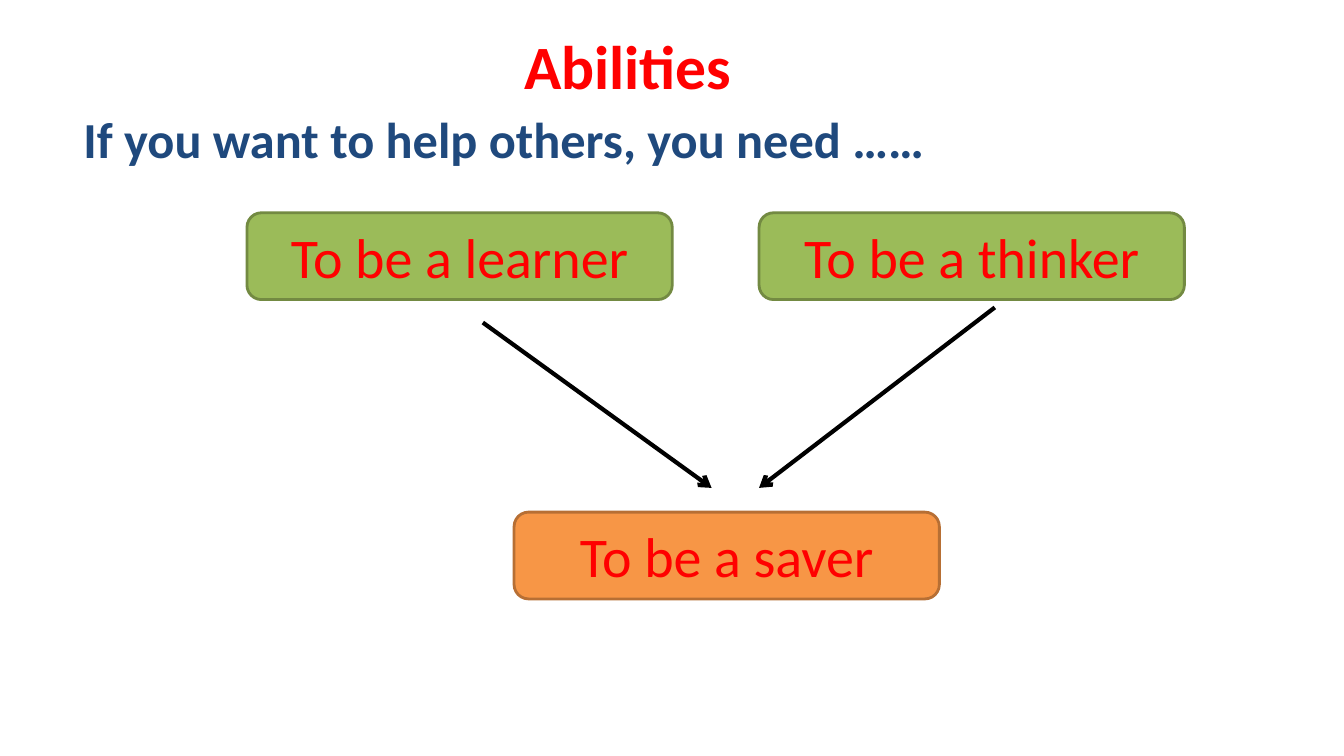
"""Builds the Abilities slide: two roles leading to a third."""
from lxml.etree import SubElement
from pptx import Presentation
from pptx.dml.color import RGBColor
from pptx.enum.shapes import MSO_CONNECTOR, MSO_SHAPE
from pptx.enum.text import MSO_ANCHOR, MSO_AUTO_SIZE, PP_ALIGN
from pptx.oxml.ns import qn
from pptx.util import Pt


def paint(color, code):
    color.rgb = RGBColor.from_string(code)


def write(shape, text, size, code, bold, align, anchor):
    frame = shape.text_frame
    frame.text = text
    frame.word_wrap = True
    frame.auto_size = MSO_AUTO_SIZE.NONE
    frame.vertical_anchor = anchor
    para = frame.paragraphs[0]
    para.alignment = align
    font = para.runs[0].font
    font.name = "Calibri"
    font.size = Pt(size)
    font.bold = bold
    paint(font.color, code)


deck = Presentation()
deck.slide_width, deck.slide_height = Pt(960), Pt(540)
slide = deck.slides.add_slide(deck.slide_layouts[5])
shapes = slide.shapes

title = shapes.title
title.left, title.top, title.width, title.height = Pt(367.2), Pt(16.5), Pt(191.5), Pt(60.5)
write(title, "Abilities", 44, "FF0000", True, PP_ALIGN.LEFT, MSO_ANCHOR.TOP)

lead = shapes.add_textbox(Pt(52.5), Pt(73.5), Pt(646.5), Pt(51))
write(lead, "If you want to help others, you need ……", 36, "1F497D", True,
      PP_ALIGN.LEFT, MSO_ANCHOR.TOP)

roles = [
    ("To be a learner", 176.4, 152, "9BBB59", "738A42"),
    ("To be a thinker", 542.2, 152, "9BBB59", "738A42"),
    ("To be a saver", 367.2, 365.8, "F79646", "B76F34"),
]
for text, left, top, fill, edge in roles:
    box = shapes.add_shape(MSO_SHAPE.ROUNDED_RECTANGLE, Pt(left), Pt(top), Pt(303.8), Pt(62))
    box.shadow.inherit = False
    box.fill.solid()
    paint(box.fill.fore_color, fill)
    paint(box.line.color, edge)
    box.line.width = Pt(2)
    write(box, text, 40, "FF0000", False, PP_ALIGN.CENTER, MSO_ANCHOR.MIDDLE)

for left, top, end in [(344.9, 230.4, 508.3), (710.6, 219.6, 542.2)]:
    arrow = shapes.add_connector(MSO_CONNECTOR.STRAIGHT, Pt(left), Pt(top), Pt(end), Pt(348.5))
    paint(arrow.line.color, "000000")
    arrow.line.width = Pt(3)
    SubElement(arrow.line._get_or_add_ln(), qn("a:tailEnd"), type="arrow")
    SubElement(arrow._element.spPr, qn("a:effectLst"))

deck.save("out.pptx")
